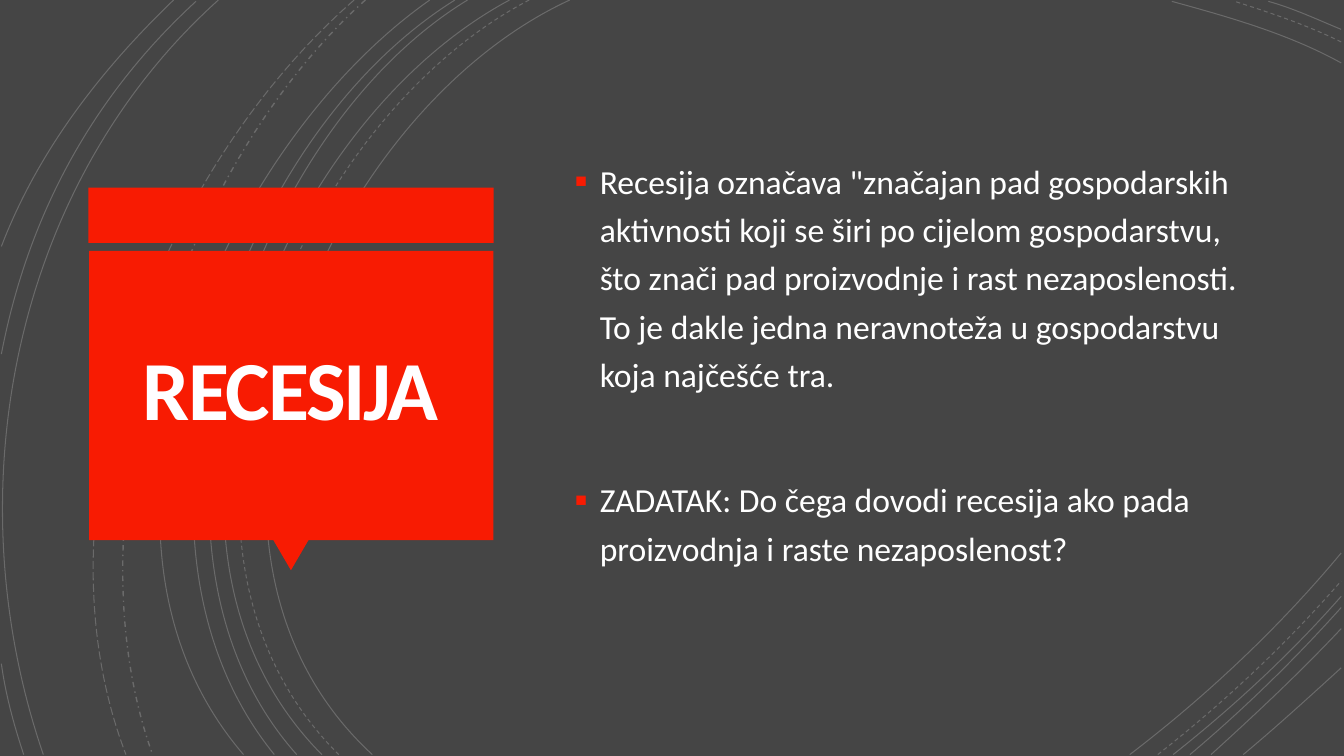
from pptx import Presentation
from pptx.dml.color import RGBColor
from pptx.enum.dml import MSO_LINE
from pptx.enum.shapes import MSO_SHAPE
from pptx.enum.text import MSO_ANCHOR, MSO_AUTO_SIZE, PP_ALIGN
from pptx.oxml.ns import qn
from pptx.util import Pt
from lxml import etree

SOLID, DASH = MSO_LINE.SOLID, MSO_LINE.DASH
DASH_DOT, LONG_DASH = MSO_LINE.DASH_DOT, MSO_LINE.LONG_DASH
RECT, TRIANGLE = MSO_SHAPE.RECTANGLE, MSO_SHAPE.ISOSCELES_TRIANGLE
MIDDLE, CENTER, NO_FIT = MSO_ANCHOR.MIDDLE, PP_ALIGN.CENTER, MSO_AUTO_SIZE.NONE

THEME = {
    "font": "Calibri", "title_size": 60, "body_size": 24,
    "background": RGBColor(0x45, 0x45, 0x45),
    "accent": RGBColor(0xF8, 0x1B, 0x02),
    "title": RGBColor(0xFF, 0xFE, 0xFF),
    "white": RGBColor(0xFF, 0xFF, 0xFF),
    "curve_opacity": 20,
}

TITLE = "RECESIJA"
# text, space before
BULLETS = [
    ('Recesija označava "značajan pad gospodarskih aktivnosti koji se širi po '
     "cijelom gospodarstvu, što znači pad proizvodnje i rast nezaposlenosti. "
     "To je dakle jedna neravnoteža u gospodarstvu koja najčešće tra.", 10),
    ("ZADATAK: Do čega dovodi recesija ako pada proizvodnja i raste "
     "nezaposlenost?", 55),
]

# left, top, width, height, rotation
BACKDROP = (RECT, 0, 0, 960, 538.6, 0)
CARD = [
    (RECT, 63.2, 134, 289.4, 39.6, 0),
    (TRIANGLE, 195.2, 385.7, 25.2, 21.6, 180),
    (RECT, 63.7, 179.3, 288.7, 206.6, 0),
]
TITLE_BOX = (69.8, 185, 275.8, 193.7)
BODY_BOX = (403.2, 63.4, 494.6, 413.3)

# start, two control points, end; dash; width
CURVES = [
    ((407, 0), (227, 83), (103, 389), (266, 539), SOLID, 0.75),
    ((958, 45), (920, 24), (877, 12), (837, 1), SOLID, 0.75),
    ((807, 539), (862, 497), (914, 448), (958, 395), SOLID, 0.75),
    ((378, 0), (205, 90), (89, 387), (242, 539), DASH, 0.75),
    ((958, 30), (934, 18), (907, 9), (882, 1), DASH, 0.75),
    ((827, 539), (873, 503), (918, 461), (958, 415), DASH, 0.75),
    ((364, 0), (194, 91), (79, 387), (230, 539), SOLID, 0.75),
    ((958, 21), (941, 14), (924, 6), (906, 1), SOLID, 0.75),
    ((838, 539), (881, 505), (922, 467), (958, 426), SOLID, 0.75),
    ((334, 0), (176, 96), (79, 390), (212, 539), SOLID, 0.75),
    ((850, 539), (888, 507), (924, 472), (958, 434), SOLID, 0.75),
    ((325, 0), (166, 99), (70, 384), (196, 539), SOLID, 0.75),
    ((865, 539), (897, 510), (929, 480), (958, 449), SOLID, 0.75),
    ((307, 0), (156, 106), (38, 381), (174, 539), SOLID, 0.75),
    ((888, 539), (912, 519), (935, 498), (958, 477), SOLID, 0.75),
    ((261, 0), (127, 120), (47, 366), (109, 539), DASH_DOT, 1),
    ((253, 0), (113, 122), (21, 359), (90, 539), LONG_DASH, 0.75),
    ((156, 0), (8, 133), (-33, 353), (31, 539), SOLID, 0.75),
    ((140, 1), (66, 69), (20, 154), (1, 253), SOLID, 0.75),
    ((1, 474), (4, 496), (10, 518), (17, 539), SOLID, 0.75),
    ((124, 0), (72, 50), (27, 108), (1, 176), SOLID, 0.75),
]


def add_curve(shapes, points, dash, width):
    """Draw one cubic Bézier: the three line segments become its control points."""
    start, *rest = [(Pt(x), Pt(y)) for x, y in points]
    builder = shapes.build_freeform(*start)
    builder.add_line_segments(rest, close=False)
    sp = builder.convert_to_shape()
    path = sp._element.find(".//" + qn("a:path"))
    segments = path.findall(qn("a:lnTo"))
    bezier = etree.SubElement(path, qn("a:cubicBezTo"))
    for segment in segments:
        bezier.append(segment[0])
        path.remove(segment)
    sp.shadow.inherit = False
    sp.fill.background()
    sp.line.width = Pt(width)
    sp.line.color.rgb = THEME["white"]
    sp.line.dash_style = dash
    color = sp.line._ln.find(".//" + qn("a:srgbClr"))
    etree.SubElement(color, qn("a:alpha"), val=str(THEME["curve_opacity"] * 1000))


def add_block(shapes, color, kind, left, top, width, height, rotation):
    sp = shapes.add_shape(kind, Pt(left), Pt(top), Pt(width), Pt(height))
    sp.rotation = rotation
    sp.shadow.inherit = False
    sp.fill.solid()
    sp.fill.fore_color.rgb = color
    sp.line.fill.background()


def place_text(sp, box):
    """Move a placeholder to the box, in front of the shapes, centred vertically."""
    sp.left, sp.top, sp.width, sp.height = map(Pt, box)
    sp._element.getparent().append(sp._element)
    tf = sp.text_frame
    tf.word_wrap = True
    tf.auto_size = NO_FIT
    tf.vertical_anchor = MIDDLE
    return tf


def add_run(p, text, size, color, bold=False):
    r = p.add_run()
    r.text = text
    r.font.name = THEME["font"]
    r.font.size = Pt(size)
    r.font.color.rgb = color
    r.font.bold = bold
    return r


def set_bullet(p):
    pPr = p._p.get_or_add_pPr()
    pPr.set("marL", str(Pt(18)))
    pPr.set("indent", str(Pt(-18)))
    color = etree.SubElement(pPr, qn("a:buClr"))
    etree.SubElement(color, qn("a:srgbClr"), val=str(THEME["accent"]))
    etree.SubElement(pPr, qn("a:buSzPct"), val="110000")
    etree.SubElement(pPr, qn("a:buFont"), typeface=THEME["font"])
    etree.SubElement(pPr, qn("a:buChar"), char="▪")


def main():
    prs = Presentation()
    prs.slide_width, prs.slide_height = Pt(960), Pt(540)
    s = prs.slides.add_slide(prs.slide_layouts[1])
    s.background.fill.solid()
    s.background.fill.fore_color.rgb = THEME["background"]

    add_block(s.shapes, THEME["background"], *BACKDROP)
    curves = s.shapes.add_group_shape()
    for *points, dash, width in CURVES:
        add_curve(curves.shapes, points, dash, width)
    card = s.shapes.add_group_shape()
    for part in CARD:
        add_block(card.shapes, THEME["accent"], *part)

    tf = place_text(s.shapes.title, TITLE_BOX)
    tf.margin_left = tf.margin_right = tf.margin_top = tf.margin_bottom = Pt(18)
    p = tf.paragraphs[0]
    p.alignment = CENTER
    p.line_spacing = 0.85
    r = add_run(p, TITLE, THEME["title_size"], THEME["title"], bold=True)
    r.font._element.set("spc", "-150")

    tf = place_text(s.placeholders[1], BODY_BOX)
    tf.margin_bottom = Pt(29.2)
    for i, (text, space_before) in enumerate(BULLETS):
        p = tf.add_paragraph() if i else tf.paragraphs[0]
        p.line_spacing = 1.2
        p.space_before = Pt(space_before)
        set_bullet(p)
        add_run(p, text, THEME["body_size"], THEME["white"])

    prs.save("out.pptx")


if __name__ == "__main__":
    main()
